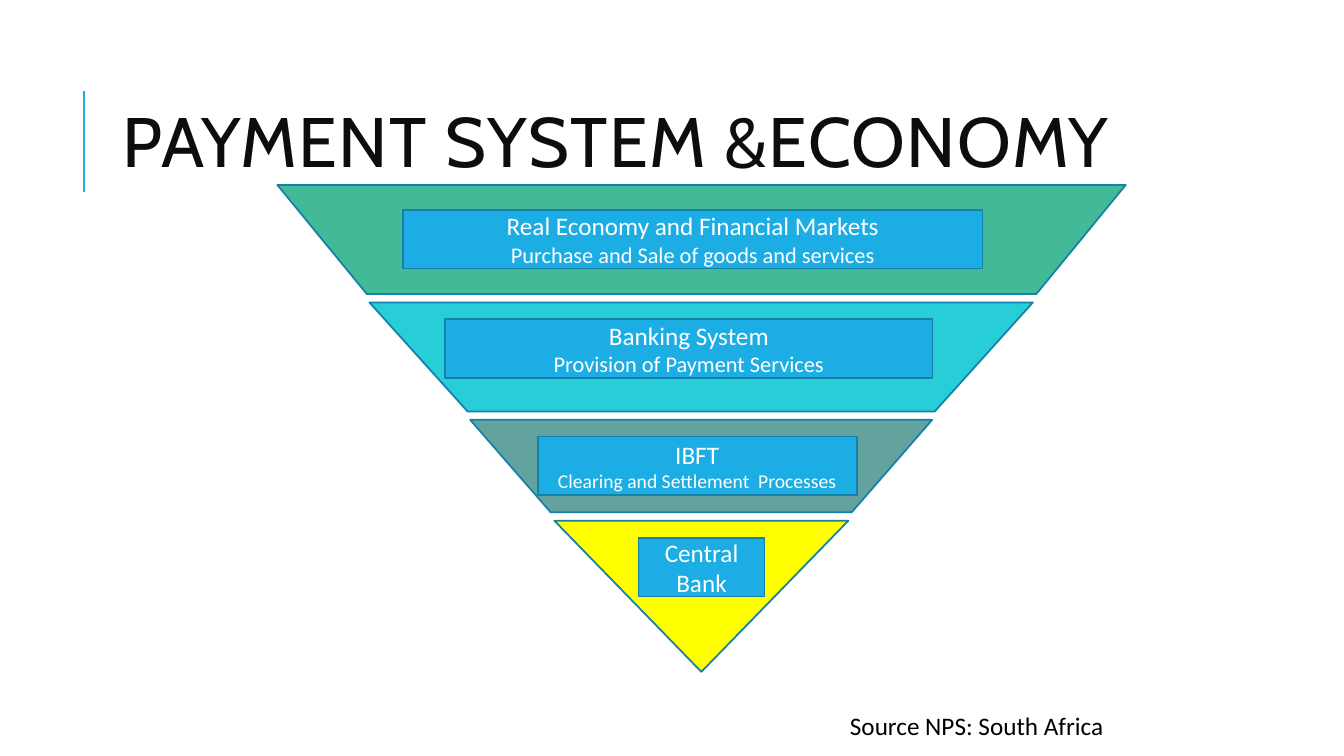
from dataclasses import dataclass

from pptx import Presentation
from pptx import util as u
from pptx.dml import color
from pptx.enum import shapes, text
from pptx.oxml import ns, xmlchemy


@dataclass(frozen=True)
class Theme:
    accent: str = "1CADE4"
    outline: str = "1580A9"
    green: str = "42BA97"
    turquoise: str = "27CED7"
    grey_teal: str = "62A39F"
    yellow: str = "FFFF00"
    white: str = "FFFFFF"
    black: str = "000000"
    title_ink: str = "0D0D0D"
    title_font: str = "Cabin"
    body_font: str = "Calibri"
    title_size: float = 50
    heading_size: float = 18
    detail_size: float = 16
    small_size: float = 14
    outline_width: float = 1.25
    rule_width: float = 1.5


@dataclass(frozen=True)
class Area:
    left: float
    top: float
    width: float
    height: float

    def lengths(self) -> tuple:
        return u.Cm(self.left), u.Cm(self.top), u.Cm(self.width), u.Cm(self.height)


@dataclass(frozen=True)
class Line:
    wording: str
    size: float


@dataclass(frozen=True)
class Tier:
    kind: shapes.MSO_SHAPE
    area: Area
    slant: float
    fill: str


@dataclass(frozen=True)
class Label:
    left: float
    top: float
    width: float
    lines: tuple


THEME = Theme()
LABEL_HEIGHT = 1.48
TRAPEZOID = shapes.MSO_SHAPE.TRAPEZOID
TRIANGLE = shapes.MSO_SHAPE.ISOSCELES_TRIANGLE

TIERS = (
    Tier(TRAPEZOID, Area(6.99, 4.66, 21.38, 2.75), 0.82, THEME.green),
    Tier(TRAPEZOID, Area(9.31, 7.62, 16.72, 2.75), 0.9, THEME.turquoise),
    Tier(TRAPEZOID, Area(11.85, 10.58, 11.64, 2.33), 0.87, THEME.grey_teal),
    Tier(TRIANGLE, Area(13.97, 13.12, 7.41, 3.81), 0.5, THEME.yellow),
)

LABELS = (
    Label(10.16, 5.29, 14.6, (
        Line("Real Economy and Financial Markets", THEME.heading_size),
        Line("Purchase and Sale of goods and services", THEME.detail_size),
    )),
    Label(11.22, 8.04, 12.28, (
        Line("Banking System", THEME.heading_size),
        Line("Provision of Payment Services", THEME.detail_size),
    )),
    Label(13.55, 11, 8.04, (
        Line("IBFT", THEME.heading_size),
        Line("Clearing and Settlement  Processes", THEME.small_size),
    )),
    Label(16.09, 13.55, 3.18, (Line("Central Bank", THEME.heading_size),)),
)


def rgb(value: str) -> color.RGBColor:
    return color.RGBColor.from_string(value)


def add_span(para, line: Line, font: str, ink: str):
    span = para.add_run()
    span.text = line.wording
    span.font.size = u.Pt(line.size)
    span.font.name = font
    span.font.color.rgb = rgb(ink)
    return span


def add_block(page, kind: shapes.MSO_SHAPE, area: Area, fill: str):
    block = page.shapes.add_shape(kind, *area.lengths())
    block.shadow.inherit = False
    block.fill.solid()
    block.fill.fore_color.rgb = rgb(fill)
    block.line.color.rgb = rgb(THEME.outline)
    block.line.width = u.Pt(THEME.outline_width)
    return block


def add_tier(page, tier: Tier) -> None:
    block = add_block(page, tier.kind, tier.area, tier.fill)
    block.rotation = 180
    block.adjustments[0] = tier.slant


def add_label(page, label: Label) -> None:
    area = Area(label.left, label.top, label.width, LABEL_HEIGHT)
    frame = add_block(page, shapes.MSO_SHAPE.RECTANGLE, area, THEME.accent).text_frame
    frame.word_wrap = True
    frame.vertical_anchor = text.MSO_ANCHOR.MIDDLE
    for index, line in enumerate(label.lines):
        para = frame.add_paragraph() if index else frame.paragraphs[0]
        para.alignment = text.PP_ALIGN.CENTER
        add_span(para, line, THEME.body_font, THEME.white)


def add_text_box(page, area: Area):
    frame = page.shapes.add_textbox(*area.lengths()).text_frame
    frame.word_wrap = True
    return frame


def add_title(page) -> None:
    frame = add_text_box(page, Area(2.84, 1.63, 27, 4.17))
    frame.vertical_anchor = text.MSO_ANCHOR.MIDDLE
    para = frame.paragraphs[0]
    para.line_spacing = 0.8
    line = Line("PAYMENT SYSTEM &ECONOMY", THEME.title_size)
    span = add_span(para, line, THEME.title_font, THEME.title_ink)
    span.font._element.set("spc", "100")


def add_title_rule(page) -> None:
    rule = page.shapes.add_connector(
        shapes.MSO_CONNECTOR.STRAIGHT, u.Cm(2.12), u.Cm(4.83), u.Cm(2.12), u.Cm(2.29)
    )
    rule.line.color.rgb = rgb(THEME.accent)
    rule.line.width = u.Pt(THEME.rule_width)
    rule._element.spPr.append(xmlchemy.OxmlElement("a:effectLst"))


def add_source(page) -> None:
    frame = add_text_box(page, Area(21.17, 17.78, 7.41, 1.02))
    frame.auto_size = text.MSO_AUTO_SIZE.SHAPE_TO_FIT_TEXT
    line = Line("Source NPS: South Africa", THEME.heading_size)
    add_span(frame.paragraphs[0], line, THEME.body_font, THEME.black)


def main() -> None:
    deck = Presentation()
    deck.slide_width = u.Cm(33.87)
    deck.slide_height = u.Cm(19.05)
    page = deck.slides.add_slide(deck.slide_layouts[6])
    add_title_rule(page)
    add_title(page)
    for tier in TIERS:
        add_tier(page, tier)
    for label in LABELS:
        add_label(page, label)
    add_source(page)
    deck.save("out.pptx")


if __name__ == "__main__":
    main()
